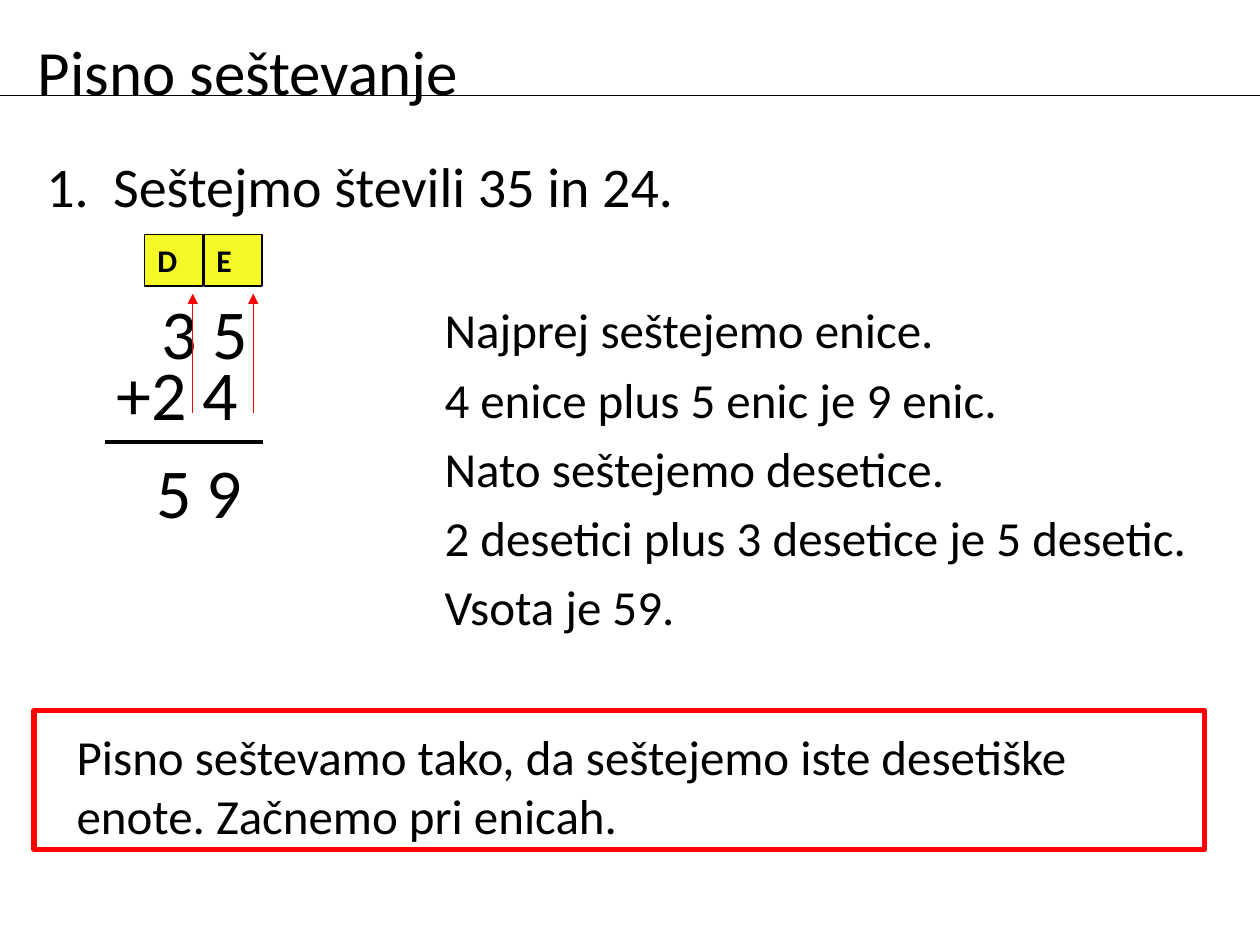
from lxml.etree import SubElement
from pptx import Presentation
from pptx.dml.color import RGBColor
from pptx.enum.shapes import MSO_CONNECTOR as Connector, MSO_SHAPE as Preset
from pptx.enum.text import MSO_ANCHOR as Anchor, PP_ALIGN as Align
from pptx.oxml.ns import qn
from pptx.util import Inches, Pt


def color(value):
    return RGBColor.from_string(value)


def write(shape, text, size, bold=False):
    frame = shape.text_frame
    for name, value in {"word_wrap": True, "vertical_anchor": Anchor.TOP}.items():
        setattr(frame, name, value)
    paragraph = frame.paragraphs[0]
    paragraph.text = text
    paragraph.alignment = Align.LEFT
    for name, value in {"name": "Calibri", "size": Pt(size), "bold": bold}.items():
        setattr(paragraph.font, name, value)
    paragraph.font.color.rgb = color("000000")
    return paragraph


presentation = Presentation()
presentation.slide_width = Inches(10)
presentation.slide_height = Inches(7.5)
slide = presentation.slides.add_slide(presentation.slide_layouts[6])

texts = [
    ("Pisno seštevanje", 0.2, 0.21, 7, 0.79, 36),
    ("3 5", 1.18, 2.25, 1.06, 0.71, 40),
    ("+2 4", 0.83, 2.73, 1.34, 0.55, 40),
    ("5", 1.14, 3.51, 0.55, 0.79, 40),
    ("9", 1.54, 3.51, 0.55, 0.79, 40),
    ("Pisno seštevamo tako, da seštejemo iste desetiške enote. Začnemo pri enicah.",
     0.51, 5.72, 8.98, 1.03, 28),
]
steps = [
    "Najprej seštejemo enice.",
    "4 enice plus 5 enic je 9 enic.",
    "Nato seštejemo desetice.",
    "2 desetici plus 3 desetice je 5 desetic.",
    "Vsota je 59.",
]
for index, step in enumerate(steps):
    texts.append((step, 3.43, 2.33 + 0.55 * index, 6.3, 0.55, 28))

for text, left, top, width, height, size in texts:
    box = slide.shapes.add_textbox(Inches(left), Inches(top), Inches(width), Inches(height))
    write(box, text, size)

task = slide.shapes.add_textbox(Inches(0.27), Inches(1.15), Inches(9.53), Inches(0.55))
properties = write(task, "1.\tSeštejmo števili 35 in 24.", 32)._p.get_or_add_pPr()
properties.set("marL", str(Inches(0.53)))
properties.set("indent", str(Inches(-0.53)))

lines = [
    (0.83, 3.51, 2.09, 3.51, "000000", 2.25, False),
    (2.01, 3.28, 2.01, 2.33, "FF0000", 0.75, True),
    (1.53, 3.28, 1.53, 2.33, "FF0000", 0.75, True),
    (0, 0.76, 10, 0.76, "000000", 0.75, False),
]
for left, top, right, bottom, stroke, weight, arrow in lines:
    line = slide.shapes.add_connector(
        Connector.STRAIGHT, Inches(left), Inches(top), Inches(right), Inches(bottom))
    line.line.color.rgb = color(stroke)
    line.line.width = Pt(weight)
    if arrow:
        SubElement(line.line._get_or_add_ln(), qn("a:tailEnd"), type="triangle")
    SubElement(line._element.spPr, qn("a:effectLst"))

rectangles = [
    ("", 0.27, 5.64, 9.29, 1.1, None, "FF0000", 3),
    ("E", 1.62, 1.86, 0.46, 0.41, "F3F826", "000000", 0.75),
    ("D", 1.15, 1.86, 0.46, 0.41, "F3F826", "000000", 0.75),
]
for text, left, top, width, height, fill, stroke, weight in rectangles:
    shape = slide.shapes.add_shape(
        Preset.RECTANGLE, Inches(left), Inches(top), Inches(width), Inches(height))
    shape.shadow.inherit = False
    shape.line.color.rgb = color(stroke)
    shape.line.width = Pt(weight)
    if fill:
        shape.fill.solid()
        shape.fill.fore_color.rgb = color(fill)
        write(shape, text, 18, bold=True)
    else:
        shape.fill.background()

presentation.save("out.pptx")
